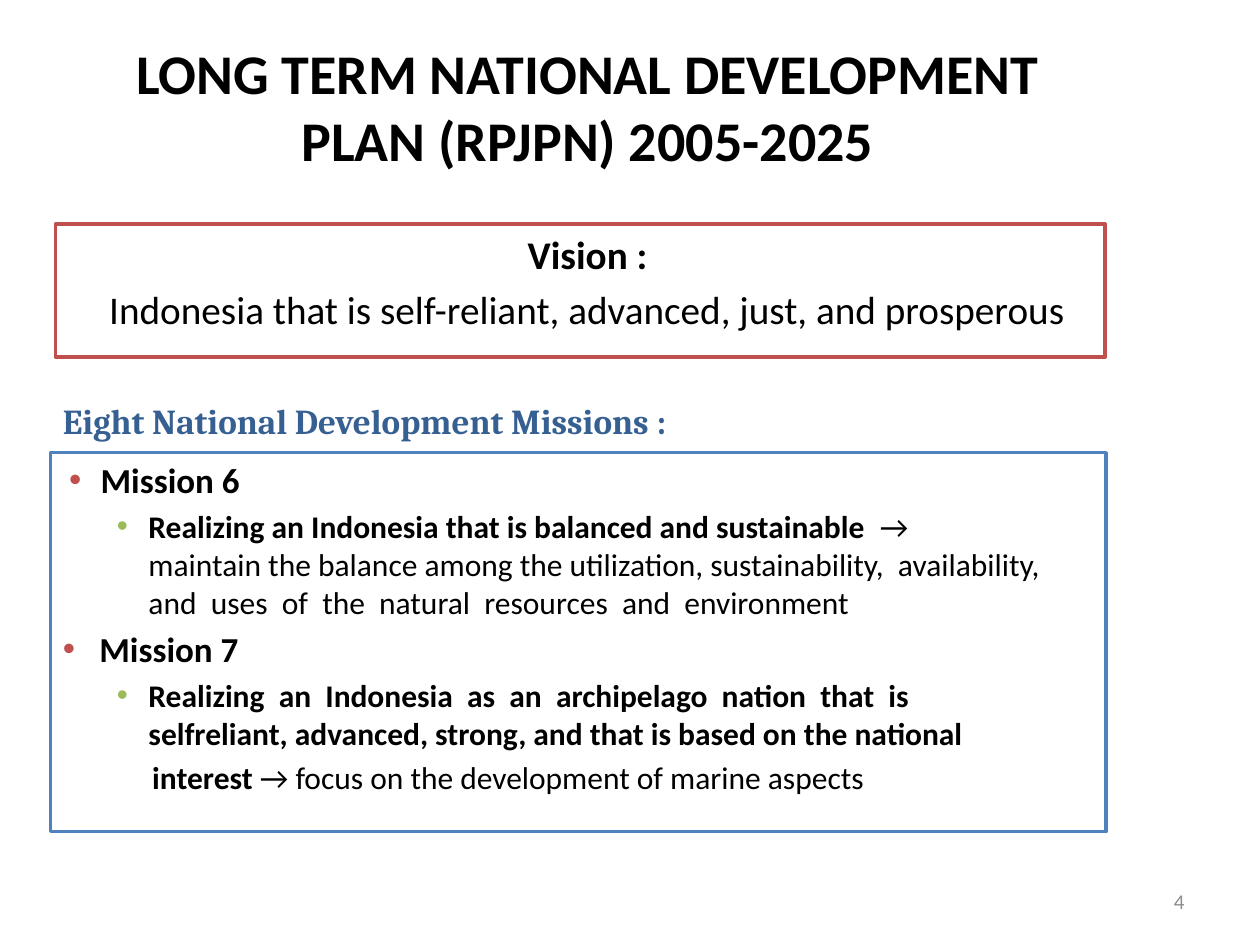
from dataclasses import dataclass, field
from typing import Optional

import pptx
import pptx.dml.color
import pptx.enum.shapes
import pptx.enum.text
import pptx.oxml.ns
import pptx.util
from lxml import etree

ALIGN = pptx.enum.text.PP_ALIGN
ANCHOR = pptx.enum.text.MSO_ANCHOR
RGB = pptx.dml.color.RGBColor.from_string
WIDTH, HEIGHT = 10, 7.5
NBSP = chr(160)


@dataclass(frozen=True)
class Theme:
    font: str = "Calibri"
    serif: str = "Cambria"
    text: str = "000000"
    paper: str = "FFFFFF"
    red: str = "C0504D"
    blue: str = "4F81BD"
    green: str = "9BBB59"
    heading: str = "376092"
    muted: str = "8C8C8C"
    title_size: float = 32
    vision_size: float = 22.4
    mission_size: float = 20
    detail_size: float = 18
    number_size: float = 12
    border: float = 2


THEME = Theme()


@dataclass(frozen=True)
class Para:
    size: float
    bold: str = ""
    plain: str = ""
    align: ALIGN = ALIGN.LEFT
    margin: float = 0
    indent: float = 0
    bullet: Optional[str] = None
    before: float = 0
    font: str = THEME.font
    color: str = THEME.text
    level: int = 0


@dataclass(frozen=True)
class Block:
    left: float
    top: float
    width: float
    height: float
    paras: list[Para] = field(default_factory=list)
    border: Optional[str] = None
    anchor: ANCHOR = ANCHOR.TOP


def glue(text: str) -> str:
    return "  ".join(part.replace(" ", NBSP) for part in text.split("  ")).replace("  ", NBSP + " ")


def vision(**text: str) -> Para:
    return Para(THEME.vision_size, align=ALIGN.CENTER, margin=0.12, before=0.2, **text)


def mission(name: str, margin: float, indent: float) -> Para:
    return Para(THEME.mission_size, name, margin=margin, indent=indent,
                bullet=THEME.red, before=0.2, level=1)


def detail(bold: str, plain: str = "", margin: float = 0.68, indent: float = -0.25,
           bullet: Optional[str] = THEME.green) -> Para:
    return Para(THEME.detail_size, bold, plain, margin=margin, indent=indent,
                bullet=bullet, before=0.2, level=2)


def add_run(p, text: str, para: Para, bold: bool) -> None:
    r = p.add_run()
    r.text = text
    formats = {"name": para.font, "size": pptx.util.Pt(para.size), "bold": bold}
    for name, value in formats.items():
        setattr(r.font, name, value)
    r.font.color.rgb = RGB(para.color)


def add_bullet(p_pr, color: str) -> None:
    qn = pptx.oxml.ns.qn
    bu_clr = etree.SubElement(p_pr, qn("a:buClr"))
    etree.SubElement(bu_clr, qn("a:srgbClr"), val=color)
    etree.SubElement(p_pr, qn("a:buFont"), typeface="Arial")
    etree.SubElement(p_pr, qn("a:buChar"), char="•")


def write_para(p, para: Para) -> None:
    formats = {"alignment": para.align, "level": para.level,
               "space_before": pptx.util.Pt(para.before * para.size)}
    for name, value in formats.items():
        setattr(p, name, value)
    p_pr = p._p.get_or_add_pPr()
    p_pr.set("marL", str(pptx.util.Inches(para.margin)))
    p_pr.set("indent", str(pptx.util.Inches(para.indent)))
    if para.bullet:
        add_bullet(p_pr, para.bullet)
    for text, bold in ((para.bold, True), (para.plain, False)):
        if text:
            add_run(p, text, para, bold)


def draw_block(s, block: Block) -> None:
    shares = (block.left, block.top, block.width, block.height)
    box = [pptx.util.Inches(share * side) for share, side in zip(shares, (WIDTH, HEIGHT) * 2)]
    if block.border:
        sp = s.shapes.add_shape(pptx.enum.shapes.MSO_SHAPE.RECTANGLE, *box)
        sp.shadow.inherit = False
        sp.fill.solid()
        sp.fill.fore_color.rgb = RGB(THEME.paper)
        sp.line.color.rgb = RGB(block.border)
        sp.line.width = pptx.util.Pt(THEME.border)
    else:
        sp = s.shapes.add_textbox(*box)
    tf = sp.text_frame
    for name, value in {"word_wrap": True, "vertical_anchor": block.anchor}.items():
        setattr(tf, name, value)
    for i, para in enumerate(block.paras):
        write_para(tf.add_paragraph() if i else tf.paragraphs[0], para)


BLOCKS = [
    Block(0.05, 0.028, 0.833, 0.167, [
        Para(THEME.title_size, "LONG TERM NATIONAL DEVELOPMENT PLAN (RPJPN) 2005-2025",
             align=ALIGN.CENTER),
    ], anchor=ANCHOR.MIDDLE),
    Block(0.044, 0.237, 0.833, 0.141, [
        vision(bold="Vision :"),
        vision(plain="Indonesia that is self-reliant, advanced, just, and prosperous"),
    ], border=THEME.red),
    Block(0.717, 0.927, 0.233, 0.053, [
        Para(THEME.number_size, plain="4", align=ALIGN.RIGHT, color=THEME.muted),
    ], anchor=ANCHOR.MIDDLE),
    Block(0.04, 0.479, 0.838, 0.401, [
        mission("Mission 6", 0.3, -0.25),
        detail(glue("Realizing an Indonesia that is balanced and sustainable  "),
               "→ " + glue("maintain the balance among the utilization, sustainability,  availability,")
               + " " + glue("and  uses  of  the  natural  resources  and  environment")),
        mission("Mission 7", 0.29, -0.29),
        detail(glue("Realizing  an  Indonesia  as  an  archipelago  nation  that  is  "
                    "selfreliant, advanced, strong, and that is based on the national")),
        detail("interest ", "→ " + glue("focus on the development of marine aspects"),
               margin=0.71, indent=0, bullet=None),
    ], border=THEME.blue),
    Block(0.04, 0.416, 0.5, 0.103, [
        Para(THEME.mission_size, "Eight National Development Missions :",
             font=THEME.serif, color=THEME.heading),
    ]),
]


def main() -> None:
    prs = pptx.Presentation()
    prs.slide_width = pptx.util.Inches(WIDTH)
    prs.slide_height = pptx.util.Inches(HEIGHT)
    s = prs.slides.add_slide(prs.slide_layouts[6])
    for block in BLOCKS:
        draw_block(s, block)
    prs.save("out.pptx")


if __name__ == "__main__":
    main()
